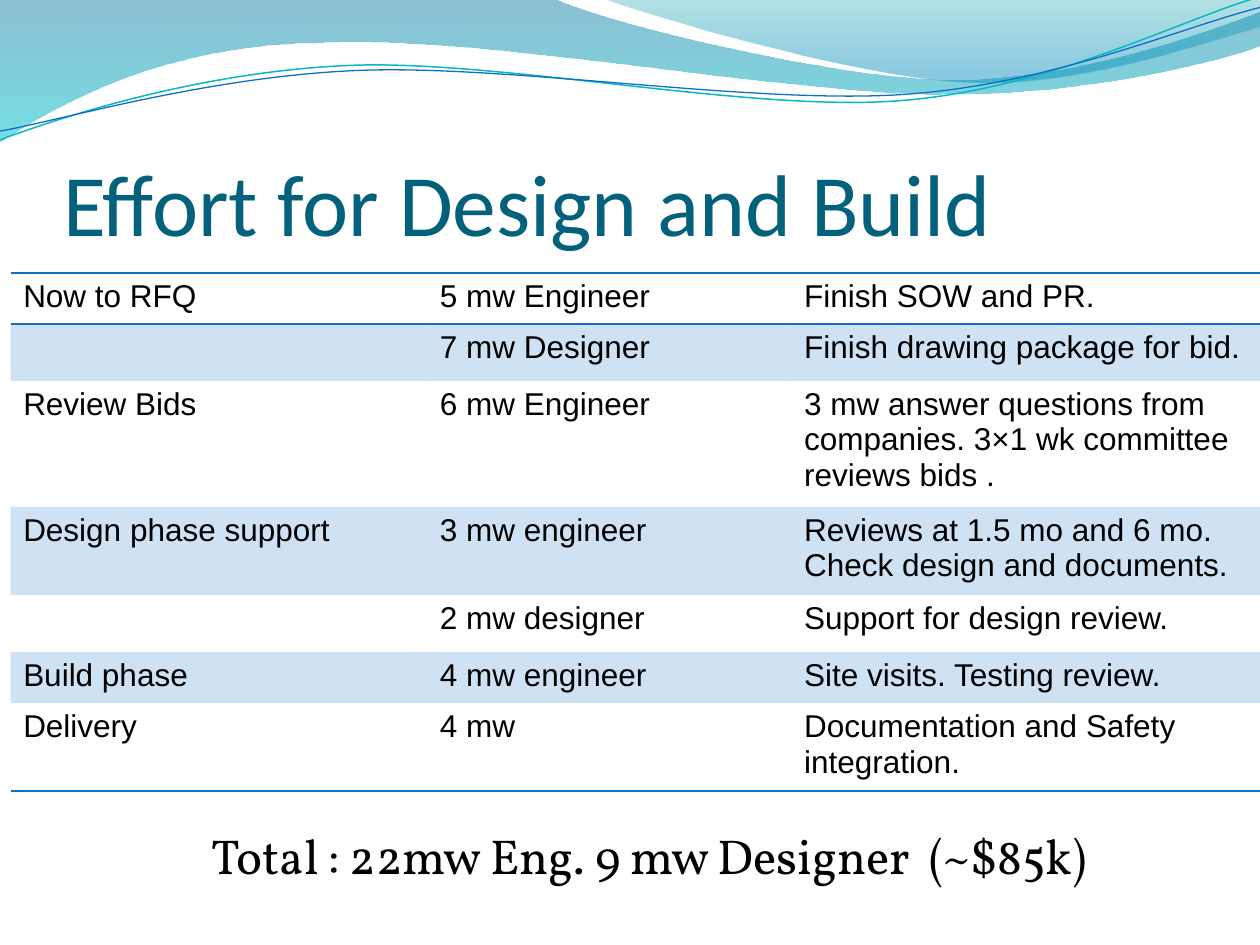
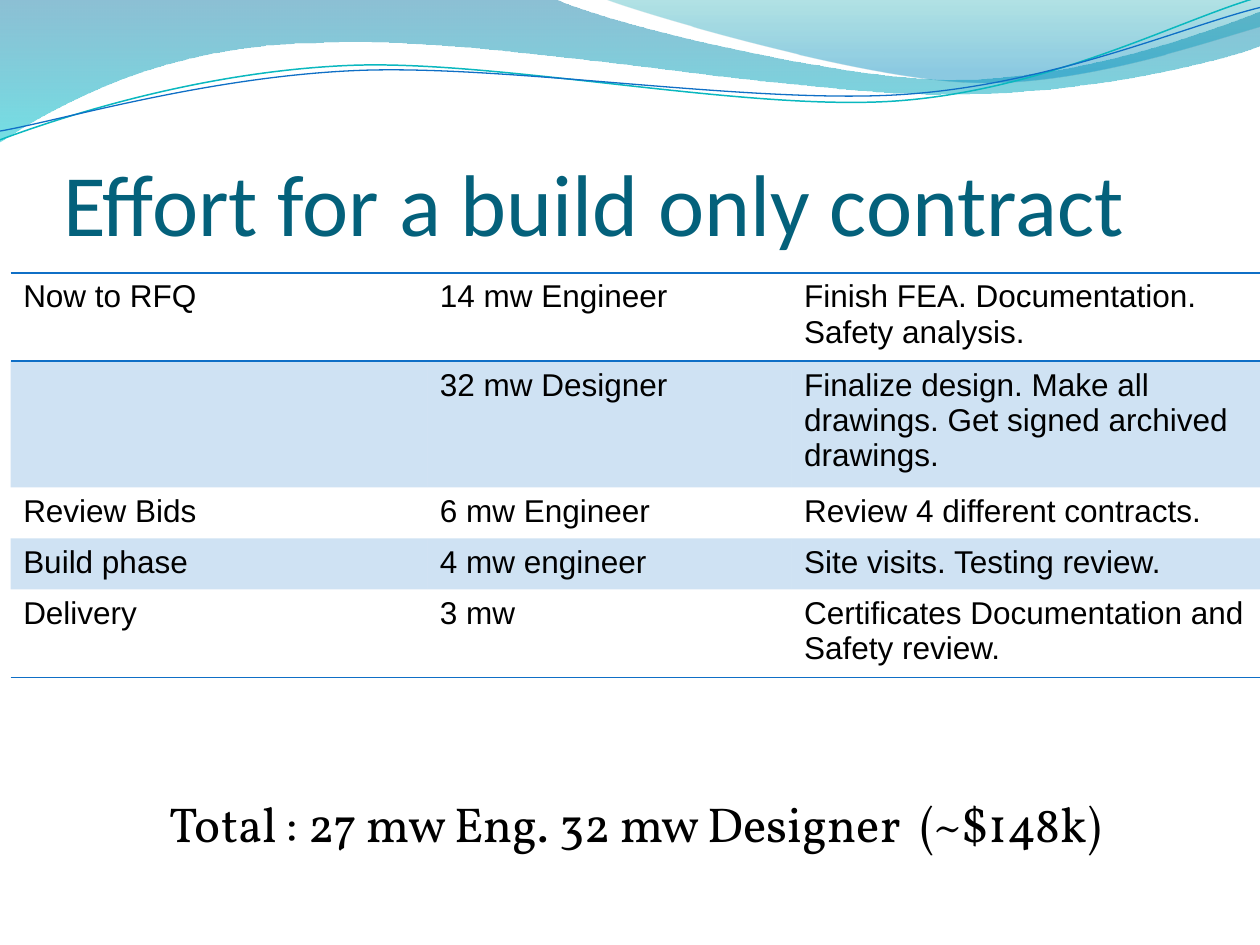
"""Build two slides that compare the effort for two kinds of contract."""
import dataclasses
import math

import lxml.etree
import pptx
import pptx.dml.color
import pptx.enum.text
import pptx.oxml.ns
import pptx.util

SLIDES = [
    {
        "title": "Effort for Design and Build",
        "rows": [
            ("Now to RFQ", "5 mw Engineer", "Finish SOW and PR."),
            ("", "7 mw Designer", "Finish drawing package for bid."),
            ("Review Bids", "6 mw Engineer",
             "3 mw answer questions from companies. 3×1 wk committee reviews bids ."),
            ("Design phase support", "3 mw engineer",
             "Reviews at 1.5 mo and 6 mo.\nCheck design and documents."),
            ("", "2 mw designer", "Support for design review."),
            ("Build phase", "4 mw engineer", "Site visits. Testing review."),
            ("Delivery", "4 mw", "Documentation and Safety integration."),
        ],
        "table_height": 289.4,
        "total": "Total : 22mw Eng. 9 mw Designer  (~$85k)",
        "total_box": (113.8, 468, 525.6, 41),
    },
    {
        "title": "Effort for a build only contract",
        "rows": [
            ("Now to RFQ", "14 mw Engineer", "Finish FEA. Documentation. Safety analysis."),
            ("", "32 mw Designer",
             "Finalize design. Make all drawings. Get signed archived drawings."),
            ("Review Bids", "6 mw Engineer", "Review 4 different contracts."),
            ("Build phase", "4 mw engineer", "Site visits. Testing review."),
            ("Delivery", "3 mw", "Certificates Documentation and Safety review."),
        ],
        "table_height": 231.1,
        "total": "Total : 27 mw Eng. 32 mw Designer  (~$148k)",
        "total_box": (90, 450, 554.4, 41),
    },
]

BANDS = [
    {
        "path": [(0, -0.7), (316.8, -0.7),
                 (342.7, 12.2, 478, 45.4, 545.8, 45.4),
                 (614.2, 45.4, 689.8, 18.7, 720, 6.5), (720.7, 25.9),
                 (707.8, 31.7, 626.4, 54.7, 537.1, 54),
                 (447.8, 54, 275, 20.2, 185, 24.5),
                 (92.9, 25.2, 33.1, 59.8, -0.7, 81.4)],
        "stops": [(0, "0074A1", 45), (100, "00C6CF", 55)],
    },
    {
        "path": [(344.9, -0.7),
                 (366.5, 7.9, 491, 44.6, 553.7, 46.8),
                 (616.3, 49.7, 691.9, 23, 720, 15.1), (720, 0)],
        "stops": [(0, "00A1A9", 30), (80, "008BBF", 45)],
    },
]

WAVES = [
    {
        "path": [(0, 79.9), (34.6, 67, 113.8, 41, 199.4, 37.4),
                 (284.4, 33.8, 427, 64.1, 513.4, 57.6),
                 (599.8, 51.1, 675.4, 10.8, 718.6, -1.4)],
        "center": (359.3, 41.4), "color": "0AB8BF", "width": 0.85,
    },
    {
        "path": [(0, 74.9), (33.8, 69.1, 118.1, 43.9, 203.8, 40.3),
                 (290.2, 36.7, 429.8, 59.8, 516.2, 54),
                 (601.9, 48.2, 676.1, 15.1, 720, 4.3)],
        "center": (359.6, 42.5), "color": "0F6FC6", "width": 0.75,
    },
]


@dataclasses.dataclass(frozen=True)
class Theme:
    title: str = "04617B"
    text: str = "000000"
    accent: str = "0F6FC6"
    band_alpha: int = 20
    title_font: str = "Calibri"
    table_font: str = "Arial"
    total_font: str = "Vollkorn"
    title_size: int = 50
    table_size: int = 18
    total_size: int = 28
    rule: int = 1


T = Theme()
Pt = pptx.util.Pt
TITLE_BOX = (36, 55.4, 653.8, 90)
TABLE_LEFT, TABLE_TOP = 6.1, 156
COLUMNS = (238.1, 208.2, 267.6)
ROW_HEIGHT, OPEN_ROW_HEIGHT = 29.2, 32.4
NO_TABLE_STYLE = "{2D5ABB26-0587-4C30-8999-92F81FD0307C}"
WAVE_TILT = 2.7


def rgb(color):
    return pptx.dml.color.RGBColor.from_string(color)


def child(parent, tag, **attributes):
    return lxml.etree.SubElement(parent, pptx.oxml.ns.qn(tag), attributes)


def add_color(parent, color, alpha=100):
    clr = child(parent, "a:srgbClr", val=color)
    if alpha < 100:
        child(clr, "a:alpha", val=str(alpha * 1000))


def rotate(point, center, degrees):
    dx, dy = point[0] - center[0], point[1] - center[1]
    cos, sin = math.cos(math.radians(degrees)), math.sin(math.radians(degrees))
    return center[0] + dx * cos - dy * sin, center[1] + dx * sin + dy * cos


def add_path(s, path, close, center=(0, 0), tilt=0):
    points = [rotate(piece[k:k + 2], center, tilt)
              for piece in path for k in range(0, len(piece), 2)]
    points = [(x * 100, y * 100) for x, y in points]
    builder = s.shapes.build_freeform(*points[0], scale=Pt(1) / 100)
    builder.add_line_segments(points[1:], close=close)
    sp = builder.convert_to_shape()
    sp.shadow.inherit = False
    sp.rotation = -tilt
    segments = iter(sp.element.spPr.findall(".//" + pptx.oxml.ns.qn("a:lnTo")))
    for piece in path[1:]:
        first = next(segments)
        if len(piece) == 6:
            first.tag = pptx.oxml.ns.qn("a:cubicBezTo")
            for segment in (next(segments), next(segments)):
                first.append(segment[0])
                segment.getparent().remove(segment)
    return sp


def add_header(s):
    for band in BANDS:
        sp = add_path(s, band["path"], True)
        sp.line.fill.background()
        sp.fill.gradient()
        sp.fill.gradient_angle = 270
        stops = sp.element.spPr.find(".//" + pptx.oxml.ns.qn("a:gsLst"))
        for old in list(stops):
            stops.remove(old)
        for position, color, alpha in band["stops"]:
            add_color(child(stops, "a:gs", pos=str(position * 1000)), color, alpha)
    for wave in WAVES:
        sp = add_path(s, wave["path"], False, wave["center"], WAVE_TILT)
        sp.fill.background()
        sp.line.color.rgb = rgb(wave["color"])
        sp.line.width = Pt(wave["width"])


def add_run(p, text, font, size, color):
    r = p.add_run()
    r.text = text
    r.font.name = font
    r.font.size = Pt(size)
    r.font.color.rgb = rgb(color)


def add_title(s, text):
    tf = s.shapes.add_textbox(*map(Pt, TITLE_BOX)).text_frame
    tf.word_wrap = True
    tf.vertical_anchor = pptx.enum.text.MSO_ANCHOR.BOTTOM
    tf.margin_left = tf.margin_right = tf.margin_bottom = 0
    add_run(tf.paragraphs[0], text, T.title_font, T.title_size, T.title)


def add_total(s, text, box):
    tf = s.shapes.add_textbox(*map(Pt, box)).text_frame
    tf.word_wrap = False
    tf.auto_size = pptx.enum.text.MSO_AUTO_SIZE.SHAPE_TO_FIT_TEXT
    add_run(tf.paragraphs[0], text, T.total_font, T.total_size, T.text)


def style_cell(cell, banded, edges):
    tcPr = cell._tc.get_or_add_tcPr()
    for edge in edges:
        ln = child(tcPr, edge, w=str(Pt(T.rule)))
        add_color(child(ln, "a:solidFill"), T.accent)
    if banded:
        add_color(child(tcPr, "a:solidFill"), T.accent, T.band_alpha)
    else:
        child(tcPr, "a:noFill")


def add_effort_table(s, rows, height):
    frame = s.shapes.add_table(len(rows), len(COLUMNS), Pt(TABLE_LEFT), Pt(TABLE_TOP),
                               Pt(sum(COLUMNS)), Pt(height))
    table = frame.table
    table.first_row = table.horz_banding = False
    table._tbl.tblPr.find(pptx.oxml.ns.qn("a:tableStyleId")).text = NO_TABLE_STYLE
    for column, width in zip(table.columns, COLUMNS):
        column.width = Pt(width)
    for i, row in enumerate(rows):
        table.rows[i].height = Pt(ROW_HEIGHT if row[0] else OPEN_ROW_HEIGHT)
        edges = ["a:lnT"] if i == 0 else []
        if i in (0, len(rows) - 1):
            edges.append("a:lnB")
        for j, text in enumerate(row):
            cell = table.cell(i, j)
            style_cell(cell, i % 2 == 1, edges)
            tf = cell.text_frame
            for k, line in enumerate(text.split("\n") if text else []):
                p = tf.add_paragraph() if k else tf.paragraphs[0]
                add_run(p, line, T.table_font, T.table_size, T.text)
                end = child(p._p, "a:endParaRPr", sz=str(T.table_size * 100))
                child(end, "a:latin", typeface=T.table_font)
    frame.height = Pt(height)


def main():
    prs = pptx.Presentation()
    prs.slide_width, prs.slide_height = Pt(720), Pt(540)
    for content in SLIDES:
        s = prs.slides.add_slide(prs.slide_layouts[6])
        add_header(s)
        add_title(s, content["title"])
        add_effort_table(s, content["rows"], content["table_height"])
        add_total(s, content["total"], content["total_box"])
    prs.save("out.pptx")


if __name__ == "__main__":
    main()
